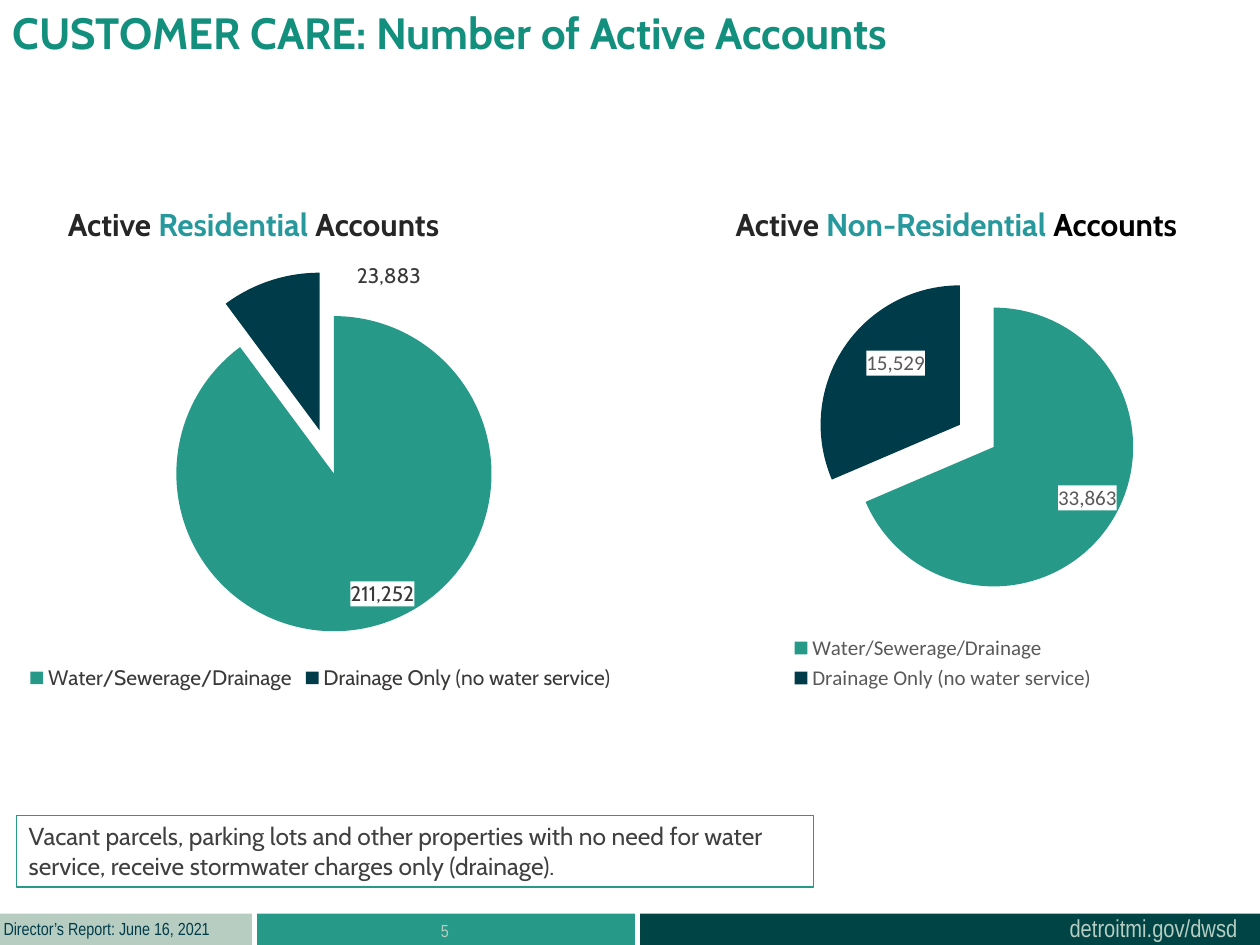
from lxml import etree
from pptx import Presentation
from pptx import util as u
from pptx.chart.data import CategoryChartData
from pptx.dml.color import RGBColor
from pptx.enum import chart as charts, shapes, text
from pptx.oxml import parse_xml
from pptx.oxml.ns import nsdecls, qn

TEAL, NAVY, SAGE = "279989", "003B49", "B7CDC2"
NARROW, CABIN = "Arial Narrow", "Cabin"
WHITE_FILL = '<a:solidFill><a:srgbClr val="FFFFFF"/></a:solidFill>'


def color(value):
    return RGBColor.from_string(value)


def add_run(paragraph, words, size, font, value, bold=False):
    run = paragraph.add_run()
    run.text = words
    run.font.size = u.Pt(size)
    run.font.name = font
    run.font.bold = bold
    run.font.color.rgb = color(value)


presentation = Presentation()
presentation.slide_width = u.Inches(10)
presentation.slide_height = u.Inches(7.5)
slide = presentation.slides.add_slide(presentation.slide_layouts[6])

for left, width, fill in [(2.04, 3, TEAL), (5.08, 4.92, "004445"), (0, 2, SAGE)]:
    band = slide.shapes.add_shape(
        shapes.MSO_SHAPE.RECTANGLE,
        u.Inches(left), u.Inches(7.25), u.Inches(width), u.Inches(0.25))
    band.shadow.inherit = False
    band.fill.solid()
    band.fill.fore_color.rgb = color(fill)
    band.line.fill.background()

labels = [
    ("detroitmi.gov/dwsd", 8.39, 7.2, 1.55, 0.34, 14, NARROW, SAGE, False, False),
    ("Director’s Report: June 16, 2021", -0.07, 7.24, 1.84, 0.27, 10, NARROW, NAVY, False, False),
    ("5", 2.03, 7.25, 3, 0.4, 10, NARROW, SAGE, False, True),
    ("CUSTOMER CARE: Number of Active Accounts", 0, 0, 7.59, 0.77, 25, CABIN, "138F7E", True, True),
]
for words, left, top, width, height, size, font, value, bold, wrap in labels:
    box = slide.shapes.add_textbox(
        u.Inches(left), u.Inches(top), u.Inches(width), u.Inches(height))
    box.text_frame.word_wrap = wrap
    paragraph = box.text_frame.paragraphs[0]
    if words == "5":
        paragraph.alignment = text.PP_ALIGN.CENTER
    add_run(paragraph, words, size, font, value, bold)

note = slide.shapes.add_textbox(
    u.Inches(0.13), u.Inches(6.47), u.Inches(6.33), u.Inches(0.57))
note.line.color.rgb = color(TEAL)
note.line.width = u.Pt(0.75)
note.text_frame.word_wrap = True
add_run(note.text_frame.paragraphs[0],
        "Vacant parcels, parking lots and other properties with no need for water "
        "service, receive stormwater charges only (drainage).", 14, CABIN, "404040")

INSIDE = charts.XL_LABEL_POSITION.INSIDE_END
CENTER = charts.XL_LABEL_POSITION.CENTER
OUTSIDE = charts.XL_LABEL_POSITION.OUTSIDE_END
pies = [
    ((4.97, 1.8, 5.03, 3.72), (33863, 15529), "Calibri", "595959",
     (0.36, 0.17, 0.44, 0.6),
     [(INSIDE, (0.02, -0.02), WHITE_FILL), (CENTER, (-0.01, -0.05), WHITE_FILL)]),
    ((-0.1, 1.61, 5.29, 3.91), (211252, 23883), CABIN, "3B3838",
     (0.28, 0.23, 0.48, 0.64),
     [(INSIDE, (0.05, -0.02), WHITE_FILL), (OUTSIDE, (0.23, 0.03), "<a:noFill/>")]),
]
for place, values, font, value, plot_box, label_rules in pies:
    data = CategoryChartData(number_format="#,##0")
    data.categories = ["Water/Sewerage/Drainage", "Drainage Only (no water service)"]
    data.add_series("Series 1", values)
    chart = slide.shapes.add_chart(
        charts.XL_CHART_TYPE.PIE, *[u.Inches(length) for length in place], data).chart
    chart.has_title = False
    chart.font.size = u.Pt(10)
    chart.font.name = "Calibri"
    chart.font.color.rgb = color("000000")
    chart.has_legend = True
    chart.legend.position = charts.XL_LEGEND_POSITION.BOTTOM
    chart.legend.include_in_layout = False

    plot = chart.plots[0]
    plot.vary_by_categories = True
    plot_area = plot._element.getparent()
    for old in plot_area.findall(qn("c:layout")):
        plot_area.remove(old)
    x, y, w, h = plot_box
    plot_area.insert(0, parse_xml(
        f'<c:layout {nsdecls("c")}><c:manualLayout><c:layoutTarget val="inner"/>'
        f'<c:xMode val="edge"/><c:yMode val="edge"/><c:x val="{x}"/><c:y val="{y}"/>'
        f'<c:w val="{w}"/><c:h val="{h}"/></c:manualLayout></c:layout>'))

    series = plot.series[0]
    series_labels = series.data_labels
    series_labels.show_value = True
    series_labels.number_format = "#,##0"
    series_labels.number_format_is_linked = False
    for styled in (chart.legend, series_labels):
        styled.font.size = u.Pt(12)
        styled.font.name = font
        styled.font.color.rgb = color(value)
    group = series._element.find(qn("c:dLbls"))
    group.find(qn("c:txPr")).addprevious(
        parse_xml(f'<c:spPr {nsdecls("c", "a")}>{WHITE_FILL}</c:spPr>'))
    leader = group.find(qn("c:showLeaderLines"))
    if leader is not None:
        leader.set("val", "0")

    for index, (fill, (position, offset, label_fill)) in enumerate(zip((TEAL, NAVY), label_rules)):
        point = series.points[index]
        point.format.fill.solid()
        point.format.fill.fore_color.rgb = color(fill)
        point.format.line.fill.background()
        label = point.data_label
        add_run(label.text_frame.paragraphs[0], f"{values[index]:,}", 12, font, value)
        label.position = position
        label_element = group.findall(qn("c:dLbl"))[index]
        for old in label_element.findall(qn("c:spPr")):
            label_element.remove(old)
        label_element.find(qn("c:dLblPos")).addprevious(
            parse_xml(f'<c:spPr {nsdecls("c", "a")}>{label_fill}</c:spPr>'))
        label_element.insert(1, parse_xml(
            f'<c:layout {nsdecls("c")}><c:manualLayout><c:x val="{offset[0]}"/>'
            f'<c:y val="{offset[1]}"/></c:manualLayout></c:layout>'))
    exploded = series._element.findall(qn("c:dPt"))[1]
    exploded.find(qn("c:spPr")).addprevious(etree.Element(qn("c:explosion"), val="29"))

headings = slide.shapes.add_textbox(
    u.Inches(0.44), u.Inches(1.61), u.Inches(9.15), u.Inches(0.41))
headings.text_frame.word_wrap = True
paragraph = headings.text_frame.paragraphs[0]
paragraph.line_spacing = 0.9
tabs = etree.SubElement(paragraph._p.get_or_add_pPr(), qn("a:tabLst"))
etree.SubElement(tabs, qn("a:tab"), pos=str(u.Inches(5.3)), algn="l")
for words, value in [("Active ", "262626"), ("Residential ", "27999D"),
                     ("Accounts\tActive ", "262626"), ("Non-Residential", "27999D"),
                     (" Accounts", "000000")]:
    add_run(paragraph, words, 18, CABIN, value, True)

presentation.save("out.pptx")
